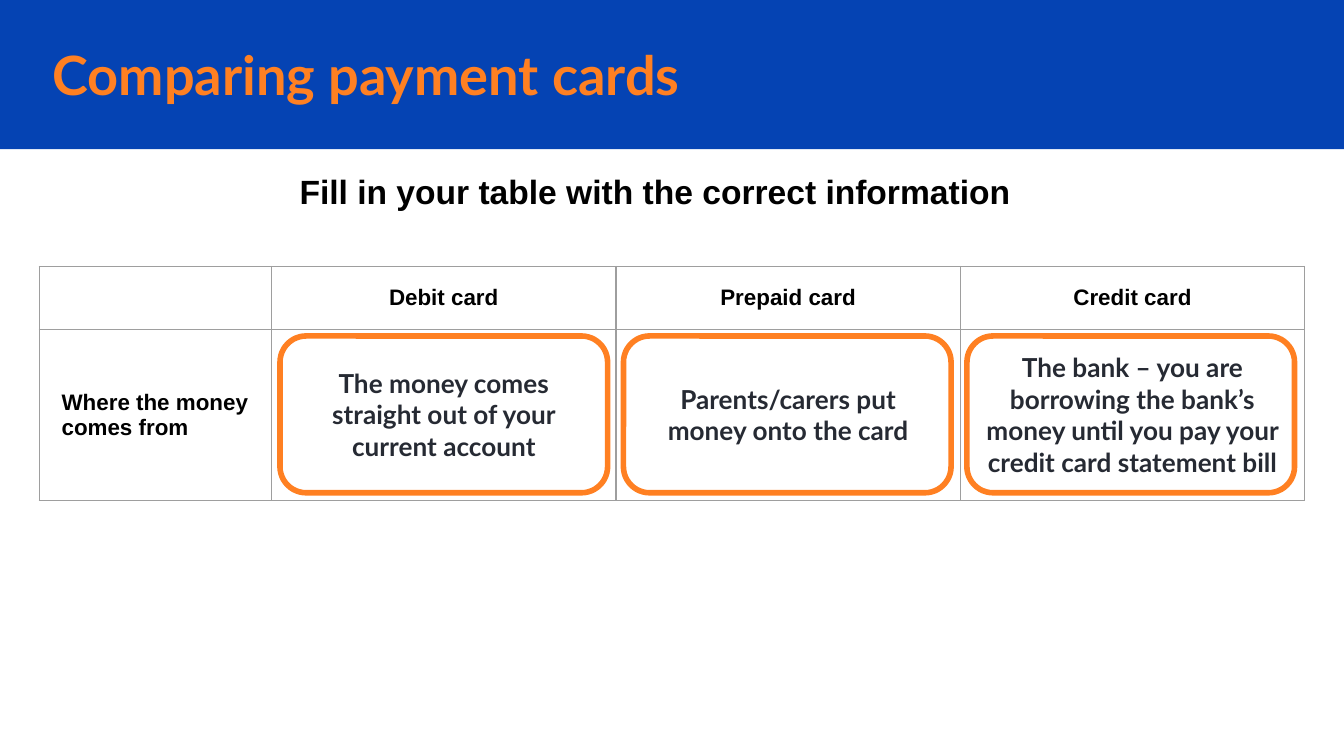
"""Build the payment card comparison slide."""
from lxml.etree import SubElement
from pptx import Presentation
from pptx.dml.color import RGBColor
from pptx.enum.shapes import MSO_SHAPE
from pptx.enum.text import MSO_ANCHOR, PP_ALIGN
from pptx.oxml.ns import qn
from pptx.util import Pt


def rgb(color):
    return RGBColor.from_string(color)


def add_text(tf, text, size, font, color, align):
    tf.word_wrap = True
    p = tf.paragraphs[0]
    p.alignment = align
    r = p.add_run()
    r.text = text
    r.font.size = Pt(size)
    r.font.name = font
    r.font.bold = True
    r.font.color.rgb = rgb(color)


prs = Presentation()
prs.slide_width, prs.slide_height = Pt(720), Pt(405)
s = prs.slides.add_slide(prs.slide_layouts[6])

band = s.shapes.add_shape(MSO_SHAPE.RECTANGLE, 0, 0, Pt(720), Pt(80))
band.shadow.inherit = False
band.fill.solid()
band.fill.fore_color.rgb = rgb("0543B3")
band.line.fill.background()

rows = [
    ["", "Debit card", "Prepaid card", "Credit card"],
    ["Where the money comes from",
     "The money comes straight out of your current account",
     "Parents/carers put money onto the card",
     "The bank – you are borrowing the bank’s money until you pay your credit card statement bill"],
]
widths = [124.5, 184.5, 184.5, 184.5]
heights = [33.8, 91.6]
table = s.shapes.add_table(2, 4, Pt(21), Pt(142.7), Pt(sum(widths)), Pt(sum(heights))).table
table.first_row = table.horz_banding = False
for column, width in zip(table.columns, widths):
    column.width = Pt(width)

for i, texts in enumerate(rows):
    table.rows[i].height = Pt(heights[i])
    for j, text in enumerate(texts):
        cell = table.cell(i, j)
        cell.vertical_anchor = MSO_ANCHOR.MIDDLE
        cell.margin_left = cell.margin_right = Pt(12 if i else 7.2)
        cell.margin_top = cell.margin_bottom = Pt(12 if i else 3.6)
        tcPr = cell._tc.get_or_add_tcPr()
        for side in ("lnL", "lnR", "lnT", "lnB"):
            ln = SubElement(tcPr, qn(f"a:{side}"), w=str(Pt(0.75)))
            SubElement(SubElement(ln, qn("a:solidFill")), qn("a:srgbClr"), val="9E9E9E")
        cell.fill.background()
        if text:
            style = (14, "Lato", "262A33") if i and j else (12, "Arial", "000000")
            add_text(cell.text_frame, text, *style, PP_ALIGN.CENTER if j else PP_ALIGN.LEFT)

labels = [
    ("Fill in your table with the correct information",
     (152, 84.5, 398, 36), 18, "Arial", "000000", PP_ALIGN.CENTER),
    ("Comparing payment cards",
     (21, 19.5, 609, 40.5), 29, "Lato", "FF8022", PP_ALIGN.LEFT),
]
for text, box, size, font, color, align in labels:
    tf = s.shapes.add_textbox(*map(Pt, box)).text_frame
    tf.margin_left = tf.margin_right = tf.margin_top = tf.margin_bottom = Pt(7.2)
    tf.vertical_anchor = MSO_ANCHOR.MIDDLE
    add_text(tf, text, size, font, color, align)

for k in range(3):
    sp = s.shapes.add_shape(MSO_SHAPE.ROUNDED_RECTANGLE,
                            Pt(150 + 184 * k), Pt(180), Pt(175.5), Pt(84))
    sp.shadow.inherit = False
    sp.fill.background()
    sp.line.color.rgb = rgb("FF8022")
    sp.line.width = Pt(3)

prs.save("out.pptx")
